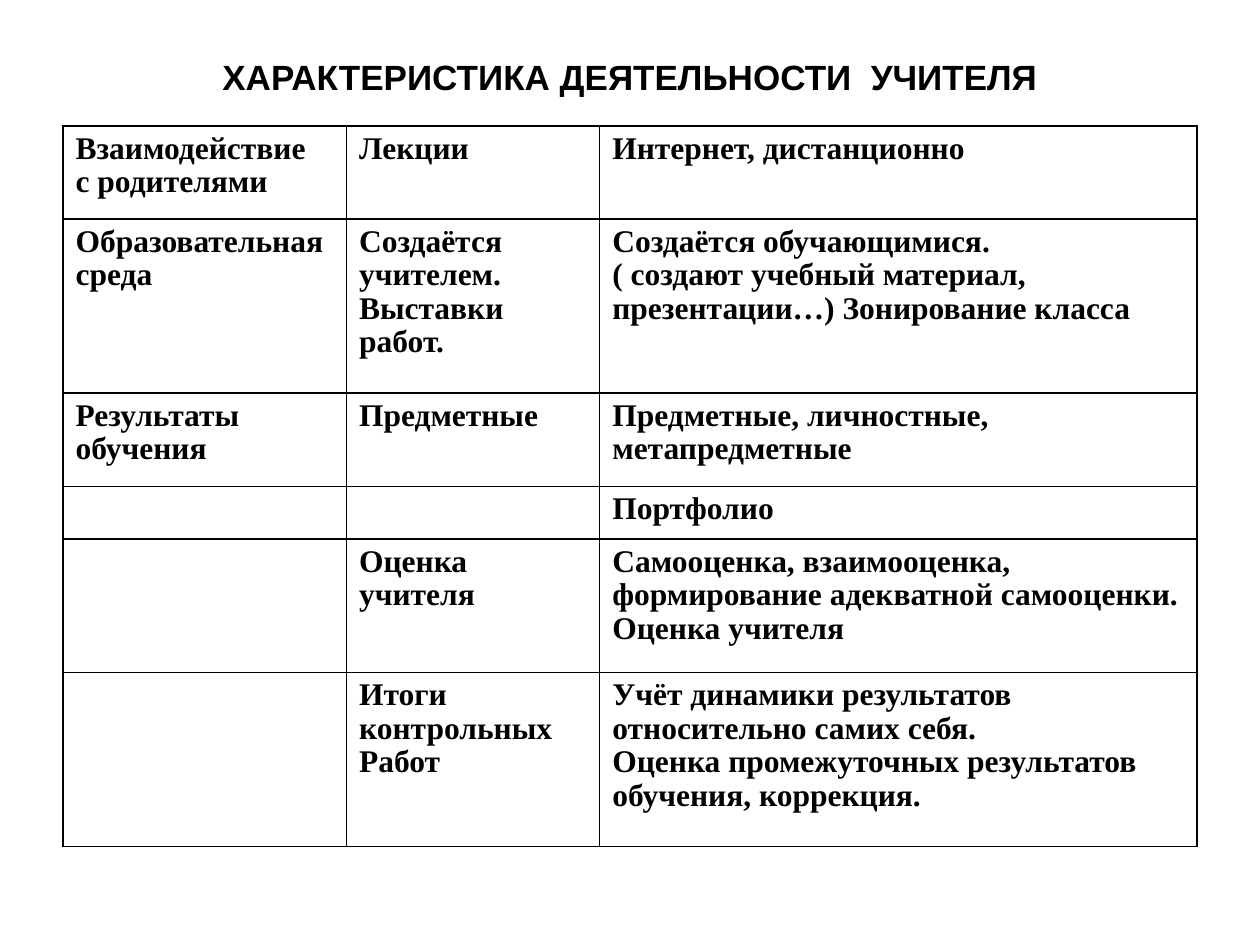
from lxml import etree
from pptx import Presentation
from pptx import util as u
from pptx.dml.color import RGBColor
from pptx.enum import text
from pptx.oxml.ns import qn

BLACK = RGBColor(0, 0, 0)
WHITE = RGBColor(255, 255, 255)

COLS = [162, 144.72, 341.28]
ROWS = [53.28, 99.36, 53.28, 30.24, 76.32, 99.36]
CELLS = [
    ["Взаимодействие\nс родителями", "Лекции", "Интернет, дистанционно"],
    ["Образовательная\nсреда", "Создаётся\nучителем.\nВыставки\nработ.",
     "Создаётся обучающимися.\n( создают учебный материал,\n"
     "презентации…) Зонирование класса"],
    ["Результаты\nобучения", "Предметные",
     "Предметные, личностные,\nметапредметные"],
    ["", "", "Портфолио"],
    ["", "Оценка\nучителя",
     "Самооценка, взаимооценка,\nформирование адекватной самооценки.\n"
     "Оценка учителя"],
    ["", "Итоги\nконтрольных\nРабот",
     "Учёт динамики результатов\nотносительно самих себя.\n"
     "Оценка промежуточных результатов\nобучения, коррекция."],
]


class Deck:
    title_font, title_size = "Arial", 20
    body_font, body_size = "Times New Roman", 18
    line_spacing = 0.96
    indent = 27
    border = 1

    def __init__(self, prs):
        self.s = prs.slides.add_slide(prs.slide_layouts[5])
        self.s.background.fill.solid()
        self.s.background.fill.fore_color.rgb = WHITE

    def style(self, p, name, size):
        for r in p.runs:
            r.font.name, r.font.size = name, u.Pt(size)
            r.font.bold = True
            r.font.color.rgb = BLACK

    def title(self, words, x, y, w, h):
        sp = self.s.shapes.title
        sp.left, sp.top, sp.width, sp.height = map(u.Pt, (x, y, w, h))
        tf = sp.text_frame
        tf.text = words
        tf.word_wrap = True
        tf.vertical_anchor = text.MSO_ANCHOR.MIDDLE
        p = tf.paragraphs[0]
        p.alignment = text.PP_ALIGN.CENTER
        self.style(p, self.title_font, self.title_size)

    def table(self, x, y, cols, rows, cells):
        frame = self.s.shapes.add_table(
            len(rows), len(cols), *map(u.Pt, (x, y, sum(cols), sum(rows))))
        tbl = frame.table
        tbl.first_row = tbl.horz_banding = False
        for col, w in zip(tbl.columns, cols):
            col.width = u.Pt(w)
        for row, h, words in zip(tbl.rows, rows, cells):
            row.height = u.Pt(h)
            for cell, content in zip(row.cells, words):
                self.cell(cell, content)

    def cell(self, cell, content):
        tf = cell.text_frame
        tf.text = content
        for p in tf.paragraphs:
            # Hanging indent: the first line starts at the cell margin
            pPr = p._p.get_or_add_pPr()
            pPr.set("marL", str(u.Pt(self.indent)))
            pPr.set("indent", str(-u.Pt(self.indent)))
            p.line_spacing = self.line_spacing
            self.style(p, self.body_font, self.body_size)
        self.borders(cell)
        cell.fill.background()

    def borders(self, cell):
        tcPr = cell._tc.get_or_add_tcPr()
        for side in ("lnL", "lnR", "lnT", "lnB"):
            ln = etree.SubElement(tcPr, qn("a:" + side),
                                  w=str(u.Pt(self.border)))
            fill = etree.SubElement(ln, qn("a:solidFill"))
            etree.SubElement(fill, qn("a:srgbClr"), val=str(BLACK))


def main():
    prs = Presentation()
    prs.slide_width, prs.slide_height = u.Pt(720), u.Pt(540)
    deck = Deck(prs)

    # Heading
    deck.title("ХАРАКТЕРИСТИКА ДЕЯТЕЛЬНОСТИ  УЧИТЕЛЯ", 36, 21.6, 648, 44.64)

    # Comparison table
    deck.table(36, 72, COLS, ROWS, CELLS)

    prs.save("out.pptx")


if __name__ == "__main__":
    main()
